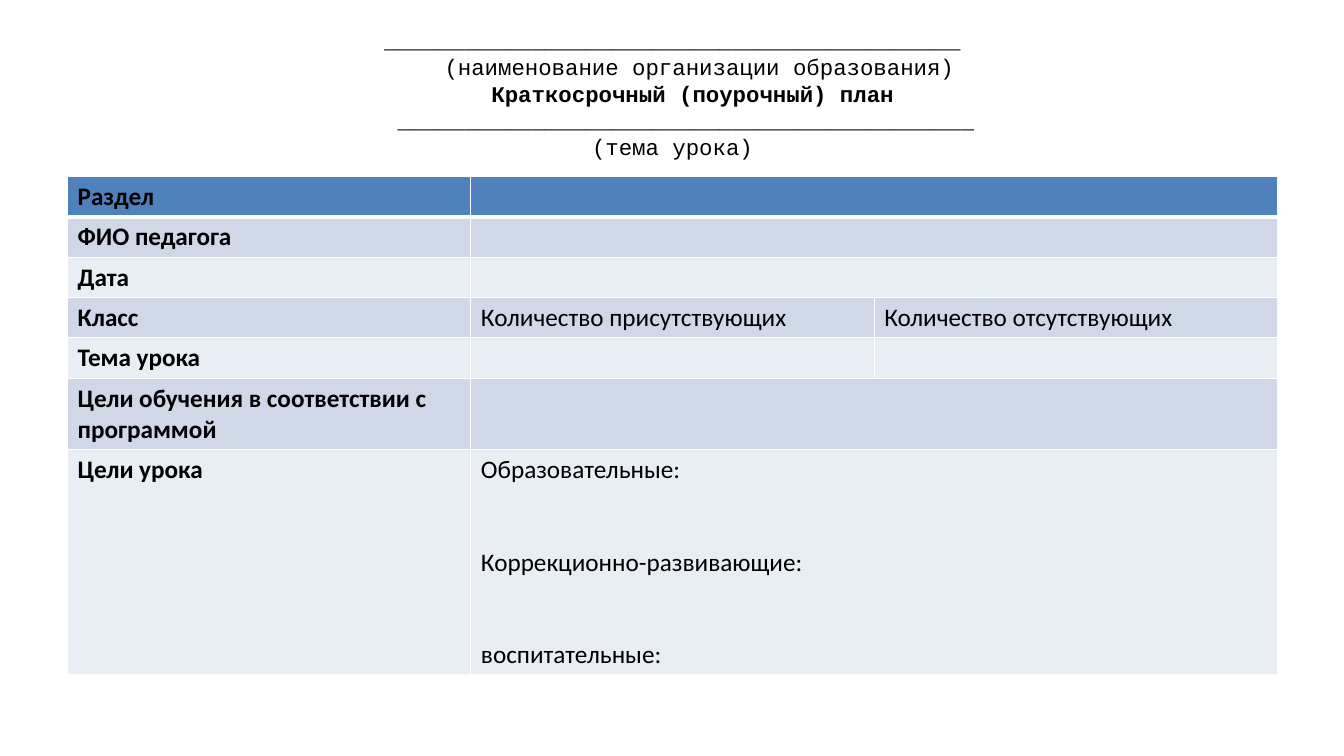
import pptx
import pptx.util
import pptx.dml.color
import pptx.enum.text
import pptx.oxml.ns
import lxml.etree

COLORS = {"text": "000000", "header": "4F81BD", "dark": "D0D8E8", "light": "E9EDF4", "border": "FFFFFF"}
BLANK_LINE = "_" * 43
TITLE_LINES = [
    (BLANK_LINE, 0, False),
    ("(наименование организации образования)", 4, False),
    ("Краткосрочный (поурочный) план", 3, True),
    (BLANK_LINE, 2, False),
    ("(тема урока)", 0, False),
]
CHARACTER_WIDTH = 9.6
PLAN_ROWS = [
    ("Раздел", [], 0.4),
    ("ФИО педагога", [], 0.4),
    ("Дата", [], 0.4),
    ("Класс", [["Количество присутствующих"], ["Количество отсутствующих"]], 0.4),
    ("Тема урока", [[], []], 0.4),
    ("Цели обучения в соответствии с программой", [], 0.71),
    ("Цели урока", [["Образовательные:", "Коррекционно-развивающие:", "воспитательные:"]], 2.23),
]
LEFT, WIDTH, COLUMN_WIDTH = 0.67, 12, 4
TITLE_TOP, TITLE_HEIGHT, TABLE_TOP = 0.3, 1.25, 1.75

Inches = pptx.util.Inches
Pt = pptx.util.Pt


def color(name):
    return pptx.dml.color.RGBColor.from_string(COLORS[name])


def add_span(para, text, font, size, bold):
    span = para.add_run()
    span.text = text
    span.font.name = font
    span.font.size = Pt(size)
    span.font.bold = bold
    span.font.color.rgb = color("text")


def add_title(page):
    box = page.shapes.add_textbox(Inches(LEFT), Inches(TITLE_TOP), Inches(WIDTH), Inches(TITLE_HEIGHT))
    frame = box.text_frame
    frame.word_wrap = True
    frame.vertical_anchor = pptx.enum.text.MSO_ANCHOR.MIDDLE
    for index, (text, indent, bold) in enumerate(TITLE_LINES):
        para = frame.add_paragraph() if index else frame.paragraphs[0]
        para.alignment = pptx.enum.text.PP_ALIGN.CENTER
        para.line_spacing = Pt(19)
        if indent:
            para._p.get_or_add_pPr().set("marL", str(int(Pt(indent * CHARACTER_WIDTH))))
        add_span(para, text, "Courier New", 16, bold)


def style_cell(cell, row_index):
    properties = cell._tc.get_or_add_tcPr()
    qn = pptx.oxml.ns.qn
    for side in "LRTB":
        below_header = (row_index, side) in ((0, "B"), (1, "T"))
        line = lxml.etree.SubElement(properties, qn(f"a:ln{side}"), w=str(int(Pt(3 if below_header else 1))))
        fill = lxml.etree.SubElement(line, qn("a:solidFill"))
        lxml.etree.SubElement(fill, qn("a:srgbClr"), val=COLORS["border"])
    cell.fill.solid()
    shade = "header" if row_index == 0 else ("light", "dark")[row_index % 2]
    cell.fill.fore_color.rgb = color(shade)


def fill_cell(cell, lines, bold):
    for index, text in enumerate(lines):
        para = cell.text_frame.add_paragraph() if index else cell.text_frame.paragraphs[0]
        if index:
            para.space_before = Pt(44)
        add_span(para, text, "Calibri", 18, bold)


def add_plan(page):
    height = sum(row[2] for row in PLAN_ROWS)
    table = page.shapes.add_table(
        len(PLAN_ROWS), 3, Inches(LEFT), Inches(TABLE_TOP), Inches(WIDTH), Inches(height)
    ).table
    for column in table.columns:
        column.width = Inches(COLUMN_WIDTH)
    for row_index, (label, values, row_height) in enumerate(PLAN_ROWS):
        table.rows[row_index].height = Inches(row_height)
        for column_index in range(3):
            style_cell(table.cell(row_index, column_index), row_index)
        if len(values) < 2:
            table.cell(row_index, 1).merge(table.cell(row_index, 2))
        fill_cell(table.cell(row_index, 0), [label], True)
        for column_index, lines in enumerate(values, 1):
            fill_cell(table.cell(row_index, column_index), lines, False)


def main():
    """Build the lesson plan slide."""
    deck = pptx.Presentation()
    deck.slide_width, deck.slide_height = Inches(13.33), Inches(7.5)
    page = deck.slides.add_slide(deck.slide_layouts[6])
    add_title(page)
    add_plan(page)
    deck.save("out.pptx")


if __name__ == "__main__":
    main()
